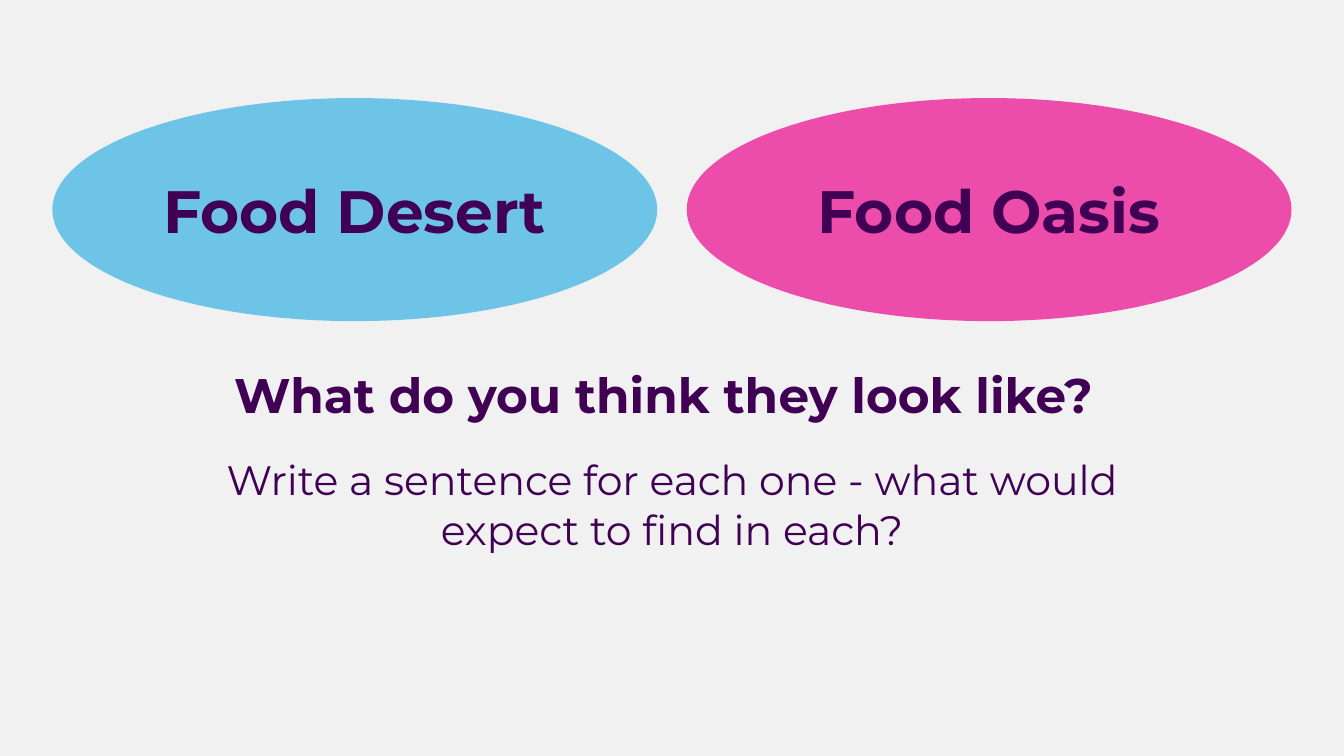
from pptx import Presentation
from pptx.dml.color import RGBColor
from pptx.enum.shapes import MSO_SHAPE as Shape
from pptx.enum.text import MSO_ANCHOR as Anchor, PP_ALIGN as Align
from pptx.oxml.ns import qn
from pptx.oxml.xmlchemy import OxmlElement
from pptx.util import Inches, Pt

COLORS = {"background": "F1F1F1", "text": "400054", "desert": "2FAFE3", "oasis": "EB008B"}
NO_GRID_STYLE = "{2D5ABB26-0587-4C30-8999-92F81FD0307C}"


class SlideBuilder:
    font = "Montserrat"
    margin = 0.1

    def __init__(self, slide):
        self.slide = slide

    def color(self, name):
        return RGBColor.from_string(COLORS[name])

    def background(self, name):
        fill = self.slide.background.fill
        fill.solid()
        fill.fore_color.rgb = self.color(name)

    def text(self, frame, words, size, bold=False):
        para = frame.paragraphs[0]
        para.text = words
        para.alignment = Align.CENTER
        para.font.name = self.font
        para.font.size = Pt(size)
        para.font.bold = bold
        para.font.color.rgb = self.color("text")

    def set_margins(self, target):
        for side in ("left", "top", "right", "bottom"):
            setattr(target, f"margin_{side}", Inches(self.margin))

    def table(self, left, top, column_widths, row_heights):
        frame = self.slide.shapes.add_table(
            len(row_heights), len(column_widths), Inches(left), Inches(top),
            Inches(sum(column_widths)), Inches(sum(row_heights)))
        table = frame.table
        table.first_row = table.horz_banding = False
        table._tbl.tblPr.find(qn("a:tableStyleId")).text = NO_GRID_STYLE
        for column, width in zip(table.columns, column_widths):
            column.width = Inches(width)
        for row, height in zip(table.rows, row_heights):
            row.height = Inches(height)
        for cell in table.iter_cells():
            cell.fill.background()
            self.set_margins(cell)
        return table

    def wide_cell(self, table, row, words, size, bold=False):
        cell = table.cell(row, 0)
        cell.merge(table.cell(row, len(table.columns) - 1))
        self.text(cell.text_frame, words, size, bold)
        return cell

    def ellipse(self, left, top, width, height, fill, words, opacity=68):
        shape = self.slide.shapes.add_shape(
            Shape.FLOWCHART_CONNECTOR, Inches(left), Inches(top), Inches(width), Inches(height))
        shape.shadow.inherit = False
        shape.line.fill.background()
        shape.fill.solid()
        shape.fill.fore_color.rgb = self.color(fill)
        alpha = OxmlElement("a:alpha")
        alpha.set("val", str(opacity * 1000))
        shape._element.spPr.find(qn("a:solidFill"))[0].append(alpha)
        frame = shape.text_frame
        frame.word_wrap = True
        frame.vertical_anchor = Anchor.MIDDLE
        self.set_margins(frame)
        self.text(frame, words, 32, bold=True)


def main():
    # A 16:9 page
    deck = Presentation()
    deck.slide_width = Inches(10)
    deck.slide_height = deck.slide_width * 9 // 16
    page = SlideBuilder(deck.slides.add_slide(deck.slide_layouts[6]))
    page.background("background")

    # Question and task, in merged rows
    table = page.table(1.04, 0.35, [3.96, 3.96], [0.92, 2.02, 0.92])
    question = page.wide_cell(table, 1, "What do you think they look like?", 26, bold=True)
    question.vertical_anchor = Anchor.BOTTOM
    question.margin_bottom = Inches(0.12)
    question.margin_right = Inches(0.22)
    page.wide_cell(table, 2, "Write a sentence for each one - what would expect to find in each?", 22)

    # The two terms to compare
    page.ellipse(5.11, 0.73, 4.5, 1.66, "oasis", "Food Oasis")
    page.ellipse(0.39, 0.73, 4.5, 1.66, "desert", "Food Desert")

    deck.save("out.pptx")


if __name__ == "__main__":
    main()
